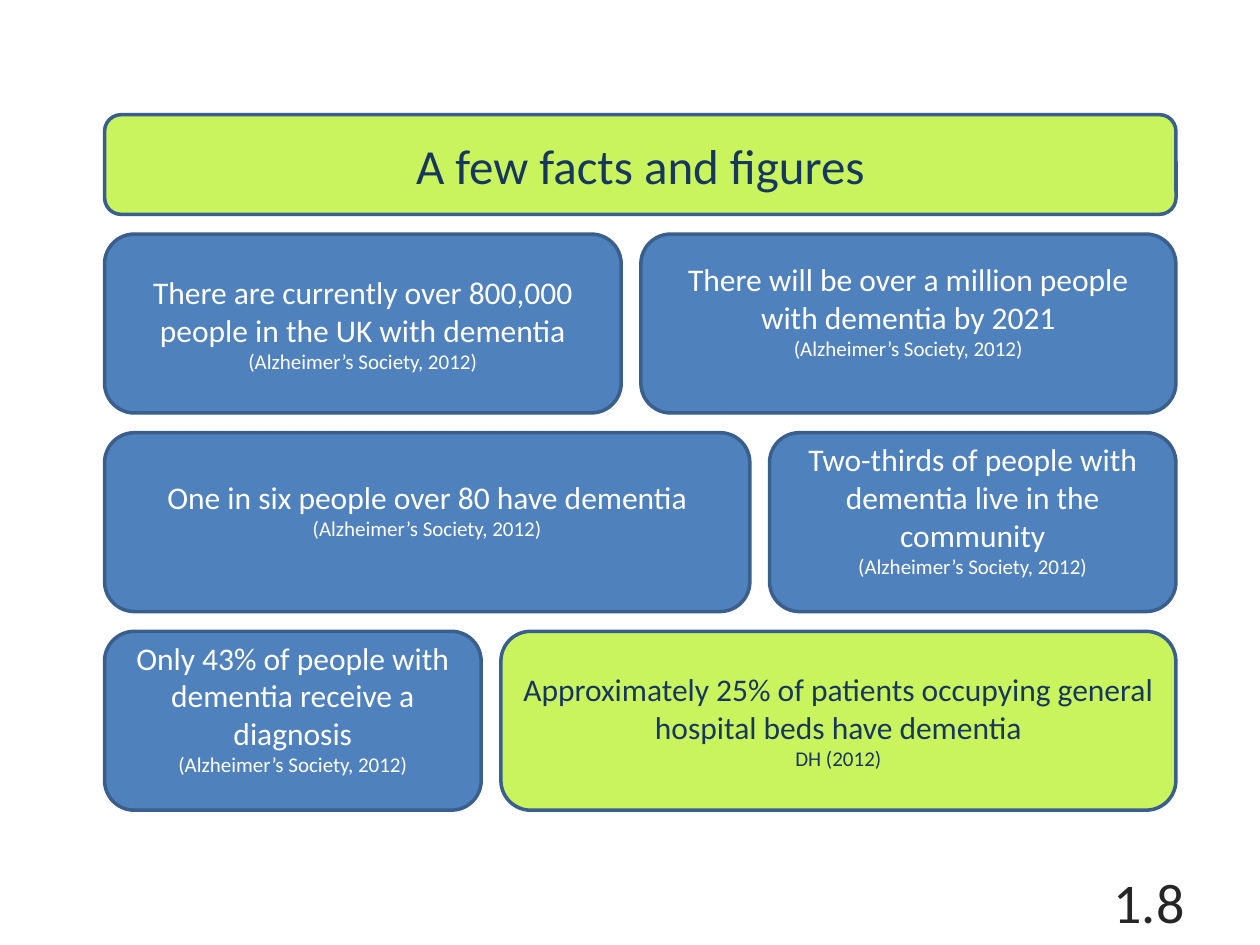
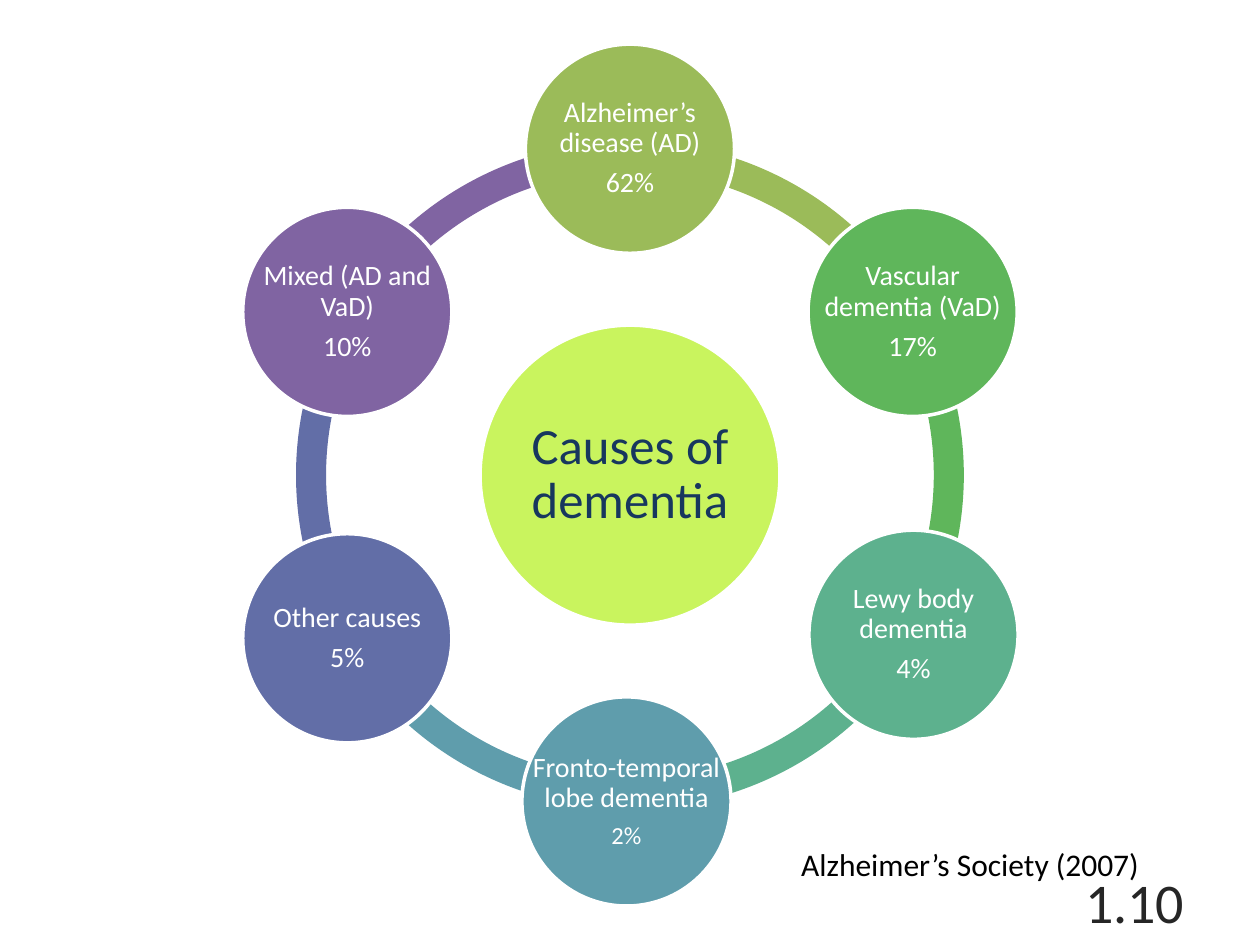
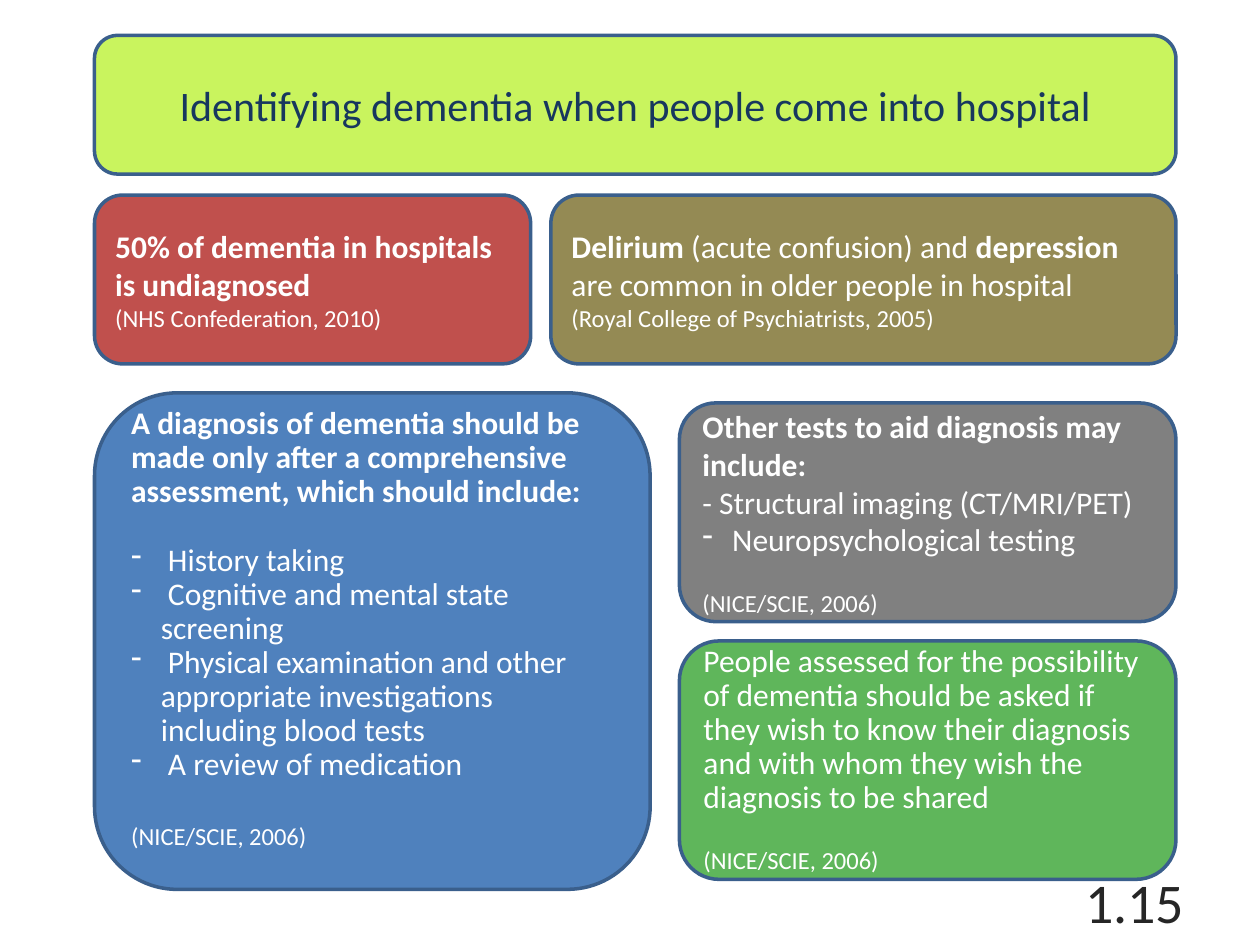
from dataclasses import dataclass
from math import cos, radians, sin
from typing import Optional, Sequence

from pptx import Presentation
from pptx.dml.color import RGBColor
from pptx.enum.shapes import MSO_SHAPE as Preset
from pptx.enum.text import MSO_ANCHOR as Anchor, MSO_AUTO_SIZE as AutoSize, PP_ALIGN as Align
from pptx.oxml.xmlchemy import OxmlElement
from pptx.util import Pt


# Shared look
@dataclass(frozen=True)
class Theme:
    font: str = "Calibri"
    lime: str = "C9F45E"
    navy: str = "17375E"
    blue: str = "4F81BD"
    outline: str = "3A5F8C"
    white: str = "FFFFFF"
    black: str = "000000"
    page: str = "262626"
    red: str = "C0504D"
    olive: str = "948A54"
    grey: str = "808080"
    green: str = "5FB65B"
    moss: str = "9BBB59"
    jade: str = "5DB18E"
    teal: str = "5F9DAC"
    indigo: str = "626EA7"
    purple: str = "8064A2"
    line_width: float = 2
    page_size: float = 32
    body: float = 18
    cause: float = 16
    source: float = 14
    small_source: float = 12


THEME = Theme()


@dataclass(frozen=True)
class Box:
    left: float
    top: float
    width: float
    height: float

    @property
    def lengths(self) -> tuple:
        return Pt(self.left), Pt(self.top), Pt(self.width), Pt(self.height)


@dataclass(frozen=True)
class Line:
    """One paragraph; words between asterisks are bold."""
    text: str
    size: float = THEME.body
    spacing: Optional[float] = None
    before: float = 0
    after: float = 0
    dashed: bool = False


@dataclass(frozen=True)
class Card:
    box: Box
    lines: Sequence[Line]
    fill: str = THEME.blue
    color: str = THEME.white
    align: Align = Align.LEFT
    lift: float = 0


@dataclass(frozen=True)
class Fact:
    text: str
    source: str = "(Alzheimer’s Society, 2012)"
    lift: float = 14.65
    fill: str = THEME.blue
    color: str = THEME.white


@dataclass(frozen=True)
class Cause:
    name: str
    share: str
    color: str
    share_size: float = THEME.cause
    shift_x: float = 0
    shift_y: float = 0


# Text
def add_dash(paragraph) -> None:
    properties = paragraph._p.get_or_add_pPr()
    properties.set("marL", str(Pt(17)))
    properties.set("indent", str(-Pt(17)))
    bullet = OxmlElement("a:buChar")
    bullet.set("char", "-")
    properties.append(bullet)


def write(shape, lines: Sequence[Line], color: str, align: Align = Align.LEFT,
          anchor: Anchor = Anchor.MIDDLE, inset: Optional[float] = None, lift: float = 0) -> None:
    frame = shape.text_frame
    frame.word_wrap = True
    frame.auto_size = AutoSize.NONE
    frame.vertical_anchor = anchor
    side, edge = (7.2, 3.6) if inset is None else (inset, inset)
    frame.margin_left = frame.margin_right = Pt(side)
    frame.margin_top, frame.margin_bottom = Pt(edge), Pt(edge + lift)
    for index, line in enumerate(lines):
        paragraph = frame.add_paragraph() if index else frame.paragraphs[0]
        paragraph.alignment = align
        paragraph.line_spacing = line.spacing
        paragraph.space_before = Pt(line.before)
        paragraph.space_after = Pt(line.after)
        if line.dashed:
            add_dash(paragraph)
        for part_index, part in enumerate(line.text.split("*")):
            if not part:
                continue
            run = paragraph.add_run()
            run.text = part
            run.font.name = THEME.font
            run.font.size = Pt(line.size)
            run.font.bold = part_index % 2 == 1
            run.font.color.rgb = RGBColor.from_string(color)


def add_text(slide, box: Box, lines: Sequence[Line], color: str, **options) -> None:
    write(slide.shapes.add_textbox(*box.lengths), lines, color, **options)


# Shapes
def add_filled(slide, preset: Preset, box: Box, fill: str, outline: Optional[str] = None):
    shape = slide.shapes.add_shape(preset, *box.lengths)
    shape.shadow.inherit = False
    shape.fill.solid()
    shape.fill.fore_color.rgb = RGBColor.from_string(fill)
    if outline:
        shape.line.color.rgb = RGBColor.from_string(outline)
        shape.line.width = Pt(THEME.line_width)
    else:
        shape.line.fill.background()
    return shape


def add_card(slide, card: Card) -> None:
    shape = add_filled(slide, Preset.ROUNDED_RECTANGLE, card.box, card.fill, THEME.outline)
    write(shape, card.lines, card.color, align=card.align, lift=card.lift)


def add_title(slide, preset: Preset, box: Box, line: Line, outline: str) -> None:
    add_filled(slide, preset, box, THEME.lime, outline)
    title = slide.shapes.title
    title.left, title.top, title.width, title.height = box.lengths
    write(title, [line], THEME.navy, align=Align.CENTER)
    # Bring the title in front of its background
    title._element.getparent().append(title._element)


def new_slide(presentation, page: str):
    slide = presentation.slides.add_slide(presentation.slide_layouts[5])
    add_text(slide, Box(516.25, 500.4, 167.75, 28.8), [Line(page, THEME.page_size)],
             THEME.page, align=Align.RIGHT)
    return slide


def circle(center_x: float, center_y: float, radius: float) -> Box:
    return Box(center_x - radius, center_y - radius, 2 * radius, 2 * radius)


# Slide 1: rows of two fact cards
FACT_ROWS = [
    (295.25, Fact("There are currently over 800,000 people in the UK with dementia", lift=0),
     Fact("There will be over a million people with dementia by 2021")),
    (368.75, Fact("One in six people over 80 have dementia"),
     Fact("Two-thirds of people with dementia live in the community")),
    (215.25, Fact("Only 43% of people with dementia receive a diagnosis"),
     Fact("Approximately 25% of patients occupying general hospital beds have dementia",
          "DH (2012)", 0, THEME.lime, THEME.navy)),
]


def build_facts(presentation) -> None:
    slide = new_slide(presentation, "1.8")
    left, width, gap, height = 59.75, 612.25, 11.25, 102.25
    add_title(slide, Preset.ROUNDED_RECTANGLE, Box(left, 65.5, width, 57),
              Line("A few facts and figures", 28), THEME.outline)
    for row, (first_width, *facts) in enumerate(FACT_ROWS):
        top = 133.75 + row * (height + gap)
        second_left = left + first_width + gap
        boxes = (Box(left, top, first_width, height),
                 Box(second_left, top, left + width - second_left, height))
        for box, fact in zip(boxes, facts):
            lines = [Line(fact.text), Line(fact.source, THEME.small_source)]
            add_card(slide, Card(box, lines, fact.fill, fact.color, Align.CENTER, fact.lift))


# Slide 2: ring of causes, clockwise from the top
CAUSES = [
    Cause("Alzheimer’s disease (AD)", "62%", THEME.moss),
    Cause("Vascular dementia (VaD)", "17%", THEME.green),
    Cause("Lewy body dementia", "4%", THEME.jade, shift_x=0.5, shift_y=-2),
    Cause("Fronto-temporal lobe dementia", "2%", THEME.teal, THEME.source, shift_x=-2),
    Cause("Other causes", "5%", THEME.indigo),
    Cause("Mixed (AD and VaD)", "10%", THEME.purple),
]


def build_causes(presentation) -> None:
    slide = new_slide(presentation, "1.10")
    center_x, center_y, orbit = 360, 271.5, 186.5
    step = 360 / len(CAUSES)
    angles = [270 + step * index for index in range(len(CAUSES))]

    # Ring segments; angle adjustments count 0.6 per degree
    for cause, angle in zip(CAUSES, angles):
        arc = add_filled(slide, Preset.BLOCK_ARC, circle(center_x, center_y, 190.8), cause.color)
        arc.adjustments[0] = angle % 360 * 0.6
        arc.adjustments[1] = (angle + step) % 360 * 0.6
        arc.adjustments[2] = 0.045

    add_title(slide, Preset.OVAL, circle(center_x, center_y, 85.7),
              Line("Causes of dementia", 29, spacing=0.9, after=10), THEME.white)

    # Cause circles
    for cause, angle in zip(CAUSES, angles):
        box = circle(center_x + orbit * cos(radians(angle)) + cause.shift_x,
                     center_y + orbit * sin(radians(angle)) + cause.shift_y, 59.75)
        add_filled(slide, Preset.OVAL, box, cause.color, THEME.white)
        lines = [Line(text, size, spacing=0.9, after=0.35 * size)
                 for text, size in ((cause.name, THEME.cause), (cause.share, cause.share_size))]
        add_text(slide, box, lines, THEME.white, align=Align.CENTER, inset=3)

    add_text(slide, Box(450.75, 479.5, 238.25, 29), [Line("Alzheimer’s Society (2007)")],
             THEME.black, anchor=Anchor.TOP)


# Slide 3: assessment cards
def dashes(*items: str, **options) -> list[Line]:
    return [Line(item, dashed=True, **options) for item in items]


def nice_source(before: float) -> Line:
    return Line("(NICE/SCIE, 2006)", THEME.source, before=before)


def build_identifying(presentation) -> None:
    slide = new_slide(presentation, "1.15")
    left, width, right_left, right_width = 54, 618, 388.25, 283.75
    add_title(slide, Preset.ROUNDED_RECTANGLE, Box(left, 20.25, width, 79.25),
              Line("Identifying dementia when people come into hospital", 24), THEME.outline)
    first_item, *other_items = (
        " History taking",
        " Cognitive and mental state screening",
        " Physical examination and other appropriate investigations including blood tests",
        " A review of medication",
    )
    cards = [
        Card(Box(left, 111.5, 249.25, 96.5), [
            Line("*50% of dementia in hospitals is undiagnosed*"),
            Line("(NHS Confederation, 2010)", THEME.source),
        ], THEME.red),
        Card(Box(314.75, 111.5, 357.25, 96.5), [
            Line("*Delirium* (acute confusion) and *depression* "
                 "are common in older people in hospital"),
            Line("(Royal College of Psychiatrists, 2005)", THEME.source),
        ], THEME.olive),
        Card(Box(right_left, 366.25, right_width, 136.25), [
            Line("People assessed for the possibility of dementia should be asked if they wish "
                 "to know their diagnosis and with whom they wish the diagnosis to be shared",
                 spacing=0.9),
            nice_source(17),
        ], THEME.green),
        Card(Box(left, 224.5, 317.5, 283.75), [
            Line("*A diagnosis of dementia should be made only after a comprehensive "
                 "assessment, which should include:*", spacing=0.9),
            *dashes(first_item, spacing=0.9, before=19.5),
            *dashes(*other_items, spacing=0.9),
            nice_source(22),
        ], lift=14),
        Card(Box(right_left, 230.25, right_width, 125), [
            Line("*Other tests to aid diagnosis may include:*"),
            Line("- Structural imaging (CT/MRI/PET)"),
            *dashes("Neuropsychological testing"),
            nice_source(17),
        ], THEME.grey),
    ]
    for card in cards:
        add_card(slide, card)


def main() -> None:
    presentation = Presentation()
    presentation.slide_width, presentation.slide_height = Pt(720), Pt(540)
    build_facts(presentation)
    build_causes(presentation)
    build_identifying(presentation)
    presentation.save("out.pptx")


if __name__ == "__main__":
    main()
